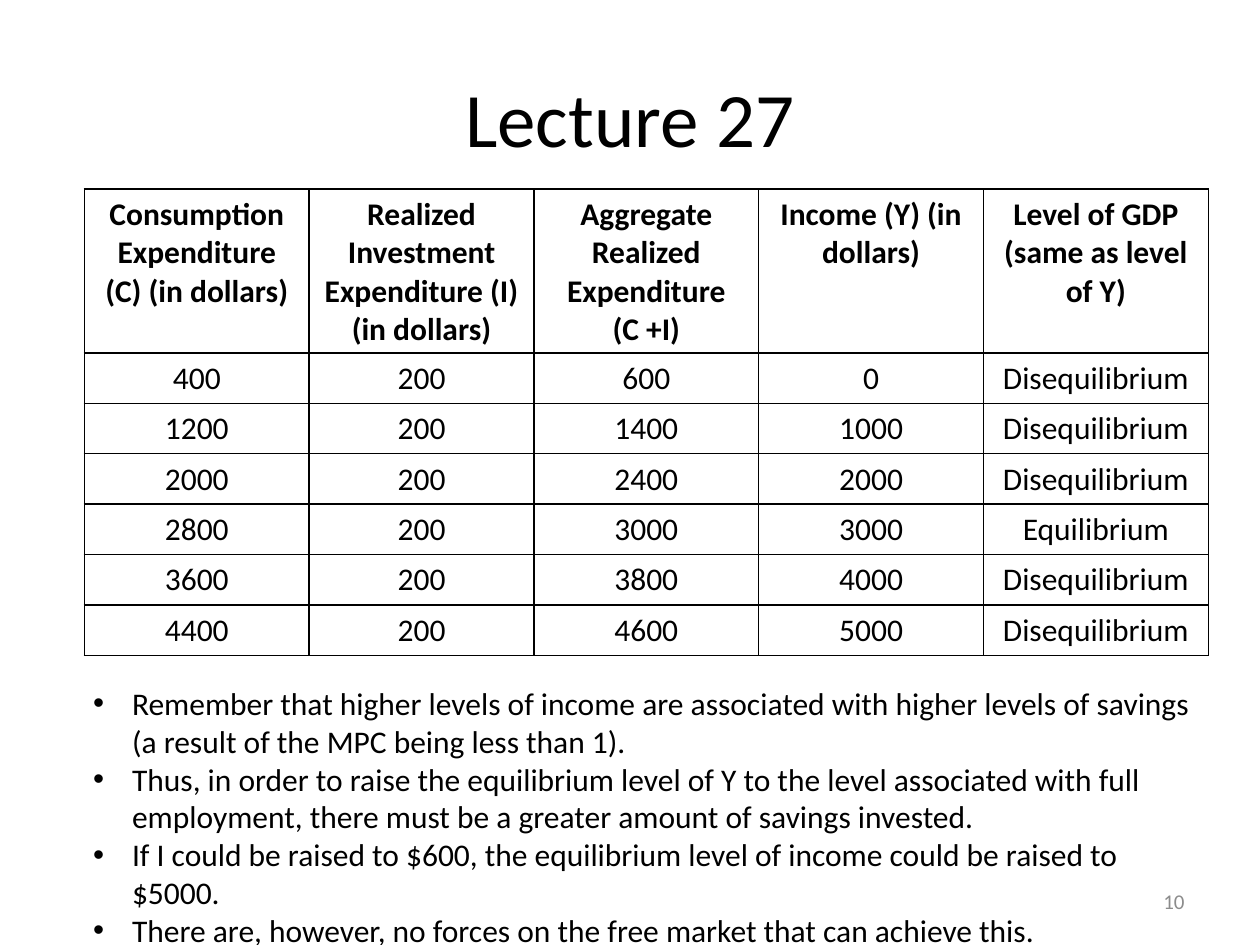
from lxml import etree
from pptx import Presentation
from pptx.dml.color import RGBColor
from pptx.enum.text import MSO_ANCHOR as Anchor, PP_ALIGN as Align
from pptx.oxml.ns import qn
from pptx.util import Inches, Pt

BLACK = RGBColor(0x00, 0x00, 0x00)
GREY = RGBColor(0x8C, 0x8C, 0x8C)
FONT = "Calibri"

# Content
TITLE = "Lecture 27"
PAGE_NUMBER = "10"
HEADERS = [
    ["Consumption Expenditure (C) (in dollars)"],
    ["Realized Investment Expenditure (I) (in dollars)"],
    ["Aggregate Realized Expenditure", "(C +I)"],
    ["Income (Y) (in dollars)"],
    ["Level of GDP (same as level of Y)"],
]
ROWS = [
    (400, 200, 600, 0, "Disequilibrium"),
    (1200, 200, 1400, 1000, "Disequilibrium"),
    (2000, 200, 2400, 2000, "Disequilibrium"),
    (2800, 200, 3000, 3000, "Equilibrium"),
    (3600, 200, 3800, 4000, "Disequilibrium"),
    (4400, 200, 4600, 5000, "Disequilibrium"),
]
BULLETS = [
    "Remember that higher levels of income are associated with higher levels "
    "of savings (a result of the MPC being less than 1).",
    "Thus, in order to raise the equilibrium level of Y to the level associated "
    "with full employment, there must be a greater amount of savings invested.",
    "If I could be raised to $600, the equilibrium level of income could be "
    "raised to $5000.",
    "There are, however, no forces on the free market that can achieve this.",
]


def write(tf, lines, size=18, color=BLACK, bold=False, align=Align.LEFT):
    for i, line in enumerate(lines):
        p = tf.paragraphs[0] if i == 0 else tf.add_paragraph()
        p.alignment = align
        r = p.add_run()
        r.text = line
        r.font.name, r.font.size, r.font.bold = FONT, Pt(size), bold
        r.font.color.rgb = color


def add_text(slide, box, lines, anchor=Anchor.TOP, **style):
    tf = slide.shapes.add_textbox(*map(Inches, box)).text_frame
    tf.word_wrap = True
    tf.vertical_anchor = anchor
    write(tf, lines, **style)
    return tf


def add_bullets(tf, indent):
    for p in tf.paragraphs:
        pPr = p._p.get_or_add_pPr()
        pPr.set("marL", str(indent))
        pPr.set("indent", str(-indent))
        etree.SubElement(pPr, qn("a:buFont"), typeface="Arial")
        etree.SubElement(pPr, qn("a:buChar"), char="•")


def add_borders(cell):
    tcPr = cell._tc.get_or_add_tcPr()
    for i, side in enumerate(("lnL", "lnR", "lnT", "lnB")):
        ln = etree.Element(qn(f"a:{side}"), w=str(Pt(1)))
        fill = etree.SubElement(ln, qn("a:solidFill"))
        etree.SubElement(fill, qn("a:srgbClr"), val=str(BLACK))
        tcPr.insert(i, ln)  # borders come before the fill


prs = Presentation()
prs.slide_width, prs.slide_height = Inches(10), Inches(7.5)
s = prs.slides.add_slide(prs.slide_layouts[6])

# Title
add_text(s, (0.5, 0.3, 9, 1.25), [TITLE], Anchor.MIDDLE, size=44, align=Align.CENTER)

# Expenditure table
grid = [HEADERS] + [[[str(value)] for value in row] for row in ROWS]
table = s.shapes.add_table(len(grid), len(HEADERS), Inches(0.67), Inches(1.5),
                           Inches(8.92), Inches(3.6)).table
table.first_row = table.horz_banding = False
for i, row in enumerate(grid):
    table.rows[i].height = Inches(0.39 if i else 1.26)
    for j, lines in enumerate(row):
        cell = table.cell(i, j)
        cell.fill.background()
        add_borders(cell)
        write(cell.text_frame, lines, bold=i == 0, align=Align.CENTER)

# Conclusions
tf = add_text(s, (0.64, 5.38, 8.94, 2.22), BULLETS)
add_bullets(tf, Inches(0.31))

# Page number
add_text(s, (7.17, 6.95, 2.33, 0.4), [PAGE_NUMBER], Anchor.MIDDLE,
         size=12, color=GREY, align=Align.RIGHT)

prs.save("out.pptx")
